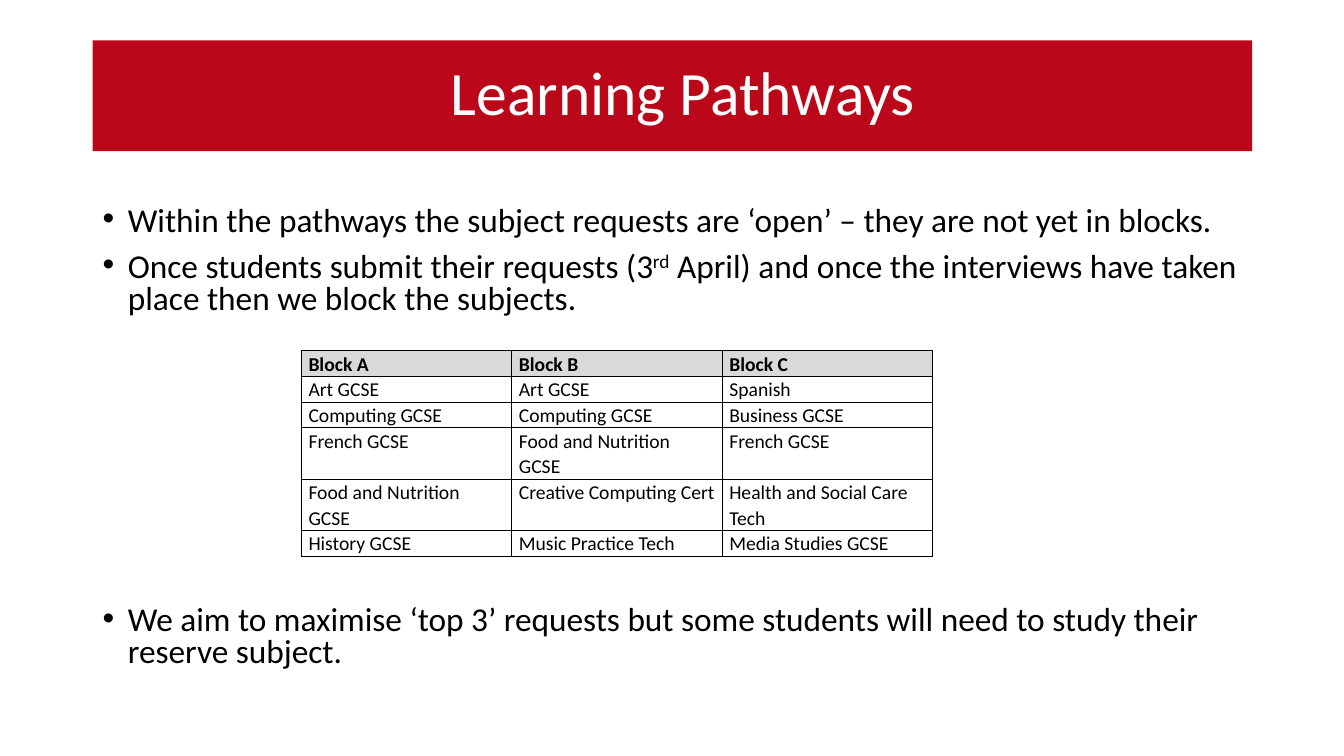
from lxml.etree import SubElement
from pptx import Presentation
from pptx.dml.color import RGBColor
from pptx.enum.shapes import MSO_SHAPE
from pptx.enum.text import MSO_ANCHOR, PP_ALIGN
from pptx.oxml import parse_xml
from pptx.oxml.ns import nsdecls, qn
from pptx.util import Inches, Pt

RED = RGBColor(0xBA, 0x07, 0x19)
WHITE = RGBColor(0xFF, 0xFF, 0xFF)
BLACK = RGBColor(0x00, 0x00, 0x00)
GREY = RGBColor(0xD9, 0xD9, 0xD9)

# Each bullet: space before in points, then (text, is superscript) runs.
# The last one leaves room for the table.
BULLETS = [
    (0, [("Within the pathways the subject requests are ‘open’ – they are not yet in blocks.", False)]),
    (10, [("Once students submit their requests (3", False), ("rd", True),
          (" April) and once the interviews have taken place then we block the subjects.", False)]),
    (207, [("We aim to maximise ‘top 3’ requests but some students will need to study their "
            "reserve subject.", False)]),
]

BLOCKS = [
    ("Block A", "Block B", "Block C"),
    ("Art GCSE", "Art GCSE", "Spanish"),
    ("Computing GCSE", "Computing GCSE", "Business GCSE"),
    ("French GCSE", "Food and Nutrition GCSE", "French GCSE"),
    ("Food and Nutrition GCSE", "Creative Computing Cert", "Health and Social Care Tech"),
    ("History GCSE", "Music Practice Tech", "Media Studies GCSE"),
]
TWO_LINE_ROWS = (3, 4)
LINE_HEIGHT = 0.255


def set_all(target, values):
    for name, value in values.items():
        setattr(target, name, value)


class SlideBuilder:
    font_name = "Calibri"

    def __init__(self, slide):
        self.s = slide

    def add_run(self, p, text, size, color=BLACK, bold=False):
        r = p.add_run()
        r.text = text
        set_all(r.font, {"name": self.font_name, "size": Pt(size), "bold": bold})
        r.font.color.rgb = color
        return r

    def banner(self, text, left, top, width, height):
        sp = self.s.shapes.add_shape(MSO_SHAPE.RECTANGLE, Inches(left), Inches(top),
                                     Inches(width), Inches(height))
        sp.shadow.inherit = False
        sp.fill.solid()
        sp.fill.fore_color.rgb = RED
        sp.line.fill.background()
        tf = sp.text_frame
        set_all(tf, {"word_wrap": True, "vertical_anchor": MSO_ANCHOR.MIDDLE,
                     "margin_left": Inches(0.31)})
        p = tf.paragraphs[0]
        set_all(p, {"alignment": PP_ALIGN.CENTER, "line_spacing": 0.9})
        self.add_run(p, text, 44, WHITE)

    def bullets(self, items, left, top, width, height):
        tf = self.s.shapes.add_textbox(Inches(left), Inches(top),
                                       Inches(width), Inches(height)).text_frame
        tf.word_wrap = True
        for i, (space_before, runs) in enumerate(items):
            p = tf.add_paragraph() if i else tf.paragraphs[0]
            pPr = p._p.get_or_add_pPr()
            pPr.set("marL", str(Inches(0.25)))
            pPr.set("indent", str(-Inches(0.25)))
            SubElement(pPr, qn("a:buFont"), typeface="Arial")
            SubElement(pPr, qn("a:buChar"), char="•")
            set_all(p, {"line_spacing": 0.8, "space_before": Pt(space_before)})
            for text, superscript in runs:
                r = self.add_run(p, text, 23.8)
                if superscript:
                    r._r.get_or_add_rPr().set("baseline", "30000")

    def border(self, cell):
        """Draw a thin black line on all four sides of the cell."""
        tcPr = cell._tc.get_or_add_tcPr()
        for i, side in enumerate("LRTB"):
            tcPr.insert(i, parse_xml(
                f'<a:ln{side} {nsdecls("a")} w="{Pt(1)}"><a:solidFill>'
                f'<a:srgbClr val="{BLACK}"/></a:solidFill></a:ln{side}>'))

    def table(self, rows, left, top, width):
        heights = [LINE_HEIGHT * (2 if i in TWO_LINE_ROWS else 1) for i in range(len(rows))]
        table = self.s.shapes.add_table(len(rows), len(rows[0]), Inches(left), Inches(top),
                                        Inches(width), Inches(sum(heights))).table
        table.horz_banding = False
        for i, texts in enumerate(rows):
            table.rows[i].height = Inches(heights[i])
            for j, text in enumerate(texts):
                cell = table.cell(i, j)
                set_all(cell, {"margin_left": Inches(0.07), "margin_right": Inches(0.07),
                               "margin_top": 0, "margin_bottom": 0})
                if i == 0:
                    cell.fill.solid()
                    cell.fill.fore_color.rgb = GREY
                else:
                    cell.fill.background()
                self.border(cell)
                p = cell.text_frame.paragraphs[0]
                p.line_spacing = 1.07
                self.add_run(p, text, 14, bold=i == 0)


def main():
    prs = Presentation()
    set_all(prs, {"slide_width": Inches(13.33), "slide_height": Inches(7.5)})
    builder = SlideBuilder(prs.slides.add_slide(prs.slide_layouts[6]))
    builder.banner("Learning Pathways", 0.92, 0.4, 11.5, 1.1)
    builder.bullets(BULLETS, 0.92, 2, 11.5, 4.76)
    builder.table(BLOCKS, 2.99, 3.48, 6.26)
    prs.save("out.pptx")


if __name__ == "__main__":
    main()
